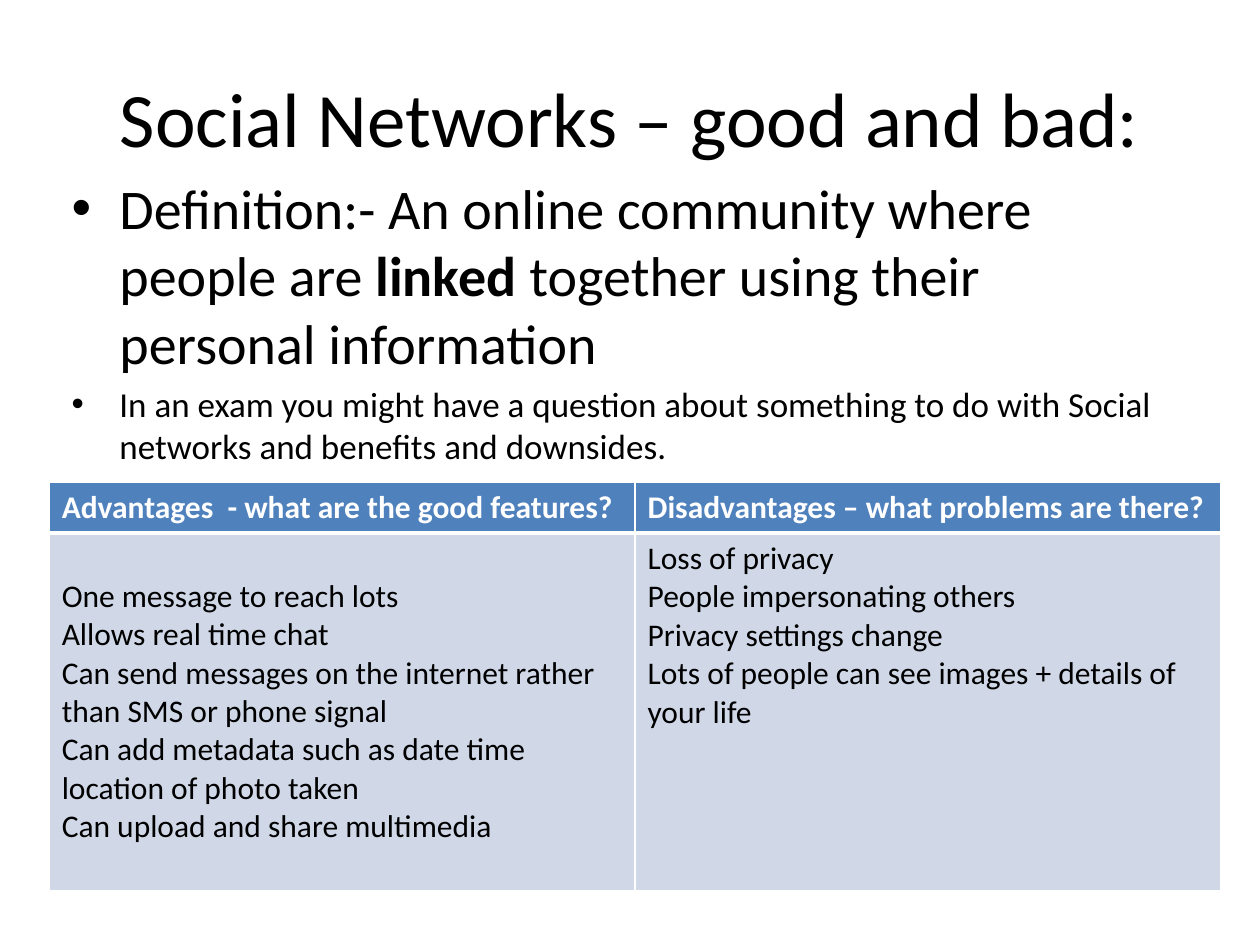
import pptx
import pptx.util
import pptx.dml.color
import pptx.enum.text
import pptx.oxml.ns
import lxml.etree

Inches = pptx.util.Inches
Pt = pptx.util.Pt
RGBColor = pptx.dml.color.RGBColor
Align = pptx.enum.text.PP_ALIGN
Anchor = pptx.enum.text.MSO_ANCHOR
qn = pptx.oxml.ns.qn

BLACK = RGBColor(0, 0, 0)
WHITE = RGBColor(255, 255, 255)
BLUE = RGBColor(0x4F, 0x81, 0xBD)
PALE = RGBColor(0xD0, 0xD8, 0xE8)


class Deck:
    face = "Calibri"

    def __init__(self, slide):
        self.slide = slide

    def style(self, item, values):
        for name, value in values.items():
            setattr(item, name, value)

    def text(self, para, words, size, color=BLACK, bold=False):
        run = para.add_run()
        run.text = words
        self.style(run.font, {"name": self.face, "size": Pt(size), "bold": bold})
        run.font.color.rgb = color

    def box(self, left, top, width, height, anchor):
        shape = self.slide.shapes.add_textbox(
            Inches(left), Inches(top), Inches(width), Inches(height))
        frame = shape.text_frame
        self.style(frame, {"word_wrap": True, "vertical_anchor": anchor})
        return frame

    def title(self, words):
        para = self.box(0.5, 0.3, 9, 1.25, Anchor.MIDDLE).paragraphs[0]
        para.alignment = Align.CENTER
        self.text(para, words, 44)

    def bullets(self, items):
        frame = self.box(0.47, 1.33, 9, 4.95, Anchor.TOP)
        for row, (size, space, parts) in enumerate(items):
            para = frame.add_paragraph() if row else frame.paragraphs[0]
            para.space_before = Pt(space)
            props = para._p.get_or_add_pPr()
            props.set("marL", str(Inches(0.38)))
            props.set("indent", str(Inches(-0.38)))
            lxml.etree.SubElement(props, qn("a:buFont"), typeface="Arial")
            lxml.etree.SubElement(props, qn("a:buChar"), char="•")
            for words, bold in parts:
                self.text(para, words, size, bold=bold)

    def edge(self, cell, widths):
        props = cell._tc.get_or_add_tcPr()
        for spot, (side, width) in enumerate(widths.items()):
            line = lxml.etree.Element(qn("a:ln" + side), w=str(Pt(width)))
            fill = lxml.etree.SubElement(line, qn("a:solidFill"))
            lxml.etree.SubElement(fill, qn("a:srgbClr"), val=str(WHITE))
            props.insert(spot, line)

    def cell(self, cell, lines, fill, color, bold, widths, top):
        cell.fill.solid()
        cell.fill.fore_color.rgb = fill
        cell.margin_top = Inches(top)
        frame = cell.text_frame
        for row, words in enumerate(lines):
            para = frame.add_paragraph() if row else frame.paragraphs[0]
            self.text(para, words, 18, color, bold)
        self.edge(cell, widths)

    def table(self, heads, lists, tops):
        grid = self.slide.shapes.add_table(
            2, 2, Inches(0.39), Inches(3.83), Inches(9.3), Inches(3.24)).table
        for row, height in zip(grid.rows, (0.4, 2.84)):
            row.height = Inches(height)
        for col, (head, lines, top) in enumerate(zip(heads, lists, tops)):
            self.cell(grid.cell(0, col), [head], BLUE, WHITE, True,
                      {"L": 1, "R": 1, "T": 1, "B": 3}, 0.05)
            self.cell(grid.cell(1, col), lines, PALE, BLACK, False,
                      {"L": 1, "R": 1, "T": 3, "B": 1}, top)


def main():
    show = pptx.Presentation()
    show.slide_width = Inches(10)
    show.slide_height = Inches(7.5)
    deck = Deck(show.slides.add_slide(show.slide_layouts[6]))
    deck.title("Social Networks – good and bad:")
    deck.bullets([
        (32, 0, [("Definition:- An online community where people are ", False),
                 ("linked ", True),
                 ("together using their personal information", False)]),
        (20, 4, [("In an exam you might have a question about something to do "
                  "with Social networks and benefits and downsides.", False)]),
    ])
    deck.table(
        ["Advantages  - what are the good features?",
         "Disadvantages – what problems are there?"],
        [["One message to reach lots",
          "Allows real time chat",
          "Can send messages on the internet rather than SMS or phone signal",
          "Can add metadata such as date time location of photo taken",
          "Can upload and share multimedia"],
         ["Loss of privacy",
          "People impersonating others",
          "Privacy settings change",
          "Lots of people can see images + details of your life"]],
        [0.35, 0.05])
    show.save("out.pptx")


if __name__ == "__main__":
    main()
